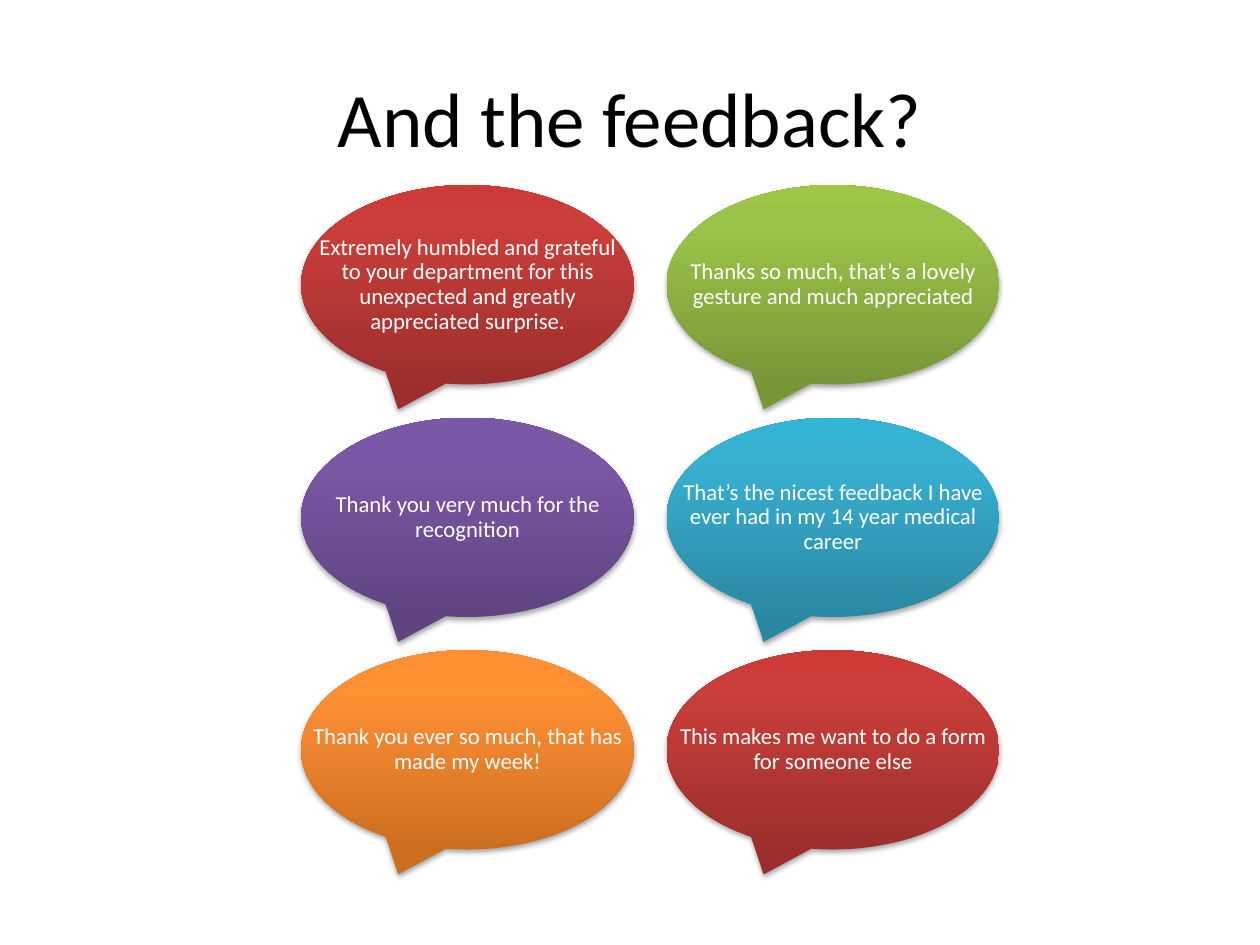
from pptx import Presentation
from pptx.dml.color import RGBColor
from pptx.enum.shapes import MSO_SHAPE as SHAPE
from pptx.enum.text import MSO_ANCHOR as ANCHOR, PP_ALIGN as ALIGN
from pptx.oxml import parse_xml
from pptx.oxml.ns import nsdecls, qn
from pptx.util import Pt

BLACK = RGBColor(0x00, 0x00, 0x00)
WHITE = RGBColor(0xFF, 0xFF, 0xFF)

# Gradients run from the bottom of a bubble to its top
STOPS = (0, 80, 100)
RED = [RGBColor.from_string(c) for c in ("9C2F2D", "CB3E3A", "CE3B37")]
GREEN = [RGBColor.from_string(c) for c in ("779737", "9BC348", "9DC746")]
PURPLE = [RGBColor.from_string(c) for c in ("5F4480", "7B58A6", "7C57A8")]
BLUE = [RGBColor.from_string(c) for c in ("2A88A2", "37B1D2", "34B4D6")]
ORANGE = [RGBColor.from_string(c) for c in ("CC6E20", "FF9034", "FF9136")]

# Grid of bubbles, in points
COLUMNS = 2
LEFT, TOP = 172.1, 105.8
WIDTH, HEIGHT = 190, 113.9
STEP_X, STEP_Y = 208.8, 132.9

FEEDBACK = [
    ("Extremely humbled and grateful to your department for this "
     "unexpected and greatly appreciated surprise.", RED),
    ("Thanks so much, that’s a lovely gesture and much appreciated", GREEN),
    ("Thank you very much for the recognition", PURPLE),
    ("That’s the nicest feedback I have ever had in my 14 year medical career",
     BLUE),
    ("Thank you ever so much, that has made my week!", ORANGE),
    ("This makes me want to do a form for someone else", RED),
]


def add_text(s, text, box, size=13, color=WHITE, inset=3.6, spacing=None):
    tf = s.shapes.add_textbox(*map(Pt, box)).text_frame
    tf.word_wrap = True
    tf.vertical_anchor = ANCHOR.MIDDLE
    tf.margin_left = tf.margin_right = Pt(inset)
    tf.margin_top = tf.margin_bottom = Pt(3.6)
    p = tf.paragraphs[0]
    p.alignment = ALIGN.CENTER
    p.line_spacing = spacing
    r = p.add_run()
    r.text = text
    r.font.name = "Calibri"
    r.font.size = Pt(size)
    r.font.color.rgb = color


def set_gradient(sp, colors):
    sp.fill.gradient()
    grad = sp._element.spPr.find(qn("a:gradFill"))
    stops = "".join(
        f'<a:gs pos="{pos * 1000}"><a:srgbClr val="{color}"/></a:gs>'
        for pos, color in zip(STOPS, colors))
    grad.getparent().replace(grad, parse_xml(
        f'<a:gradFill {nsdecls("a")} rotWithShape="1"><a:gsLst>{stops}</a:gsLst>'
        '<a:lin ang="16200000" scaled="0"/></a:gradFill>'))


def set_shadow(sp):
    sp.shadow.inherit = False
    sp._element.spPr.find(qn("a:effectLst")).append(parse_xml(
        f'<a:outerShdw {nsdecls("a")} blurRad="{Pt(3.1)}" dist="{Pt(1.8)}" '
        'dir="5400000" rotWithShape="0"><a:srgbClr val="000000">'
        '<a:alpha val="35000"/></a:srgbClr></a:outerShdw>'))


def add_bubble(s, text, colors, box):
    sp = s.shapes.add_shape(SHAPE.OVAL_CALLOUT, *map(Pt, box))
    set_gradient(sp, colors)
    sp.line.fill.background()
    set_shadow(sp)
    # The words use the full width of the bubble
    add_text(s, text, box, spacing=0.9)


def main():
    prs = Presentation()
    prs.slide_width, prs.slide_height = Pt(720), Pt(540)
    s = prs.slides.add_slide(prs.slide_layouts[6])

    # Title
    add_text(s, "And the feedback?", (36, 21.6, 648, 90),
             size=44, color=BLACK, inset=7.2)

    # Feedback bubbles
    for i, (text, colors) in enumerate(FEEDBACK):
        row, col = divmod(i, COLUMNS)
        box = (LEFT + col * STEP_X, TOP + row * STEP_Y, WIDTH, HEIGHT)
        add_bubble(s, text, colors, box)

    prs.save("out.pptx")


if __name__ == "__main__":
    main()
